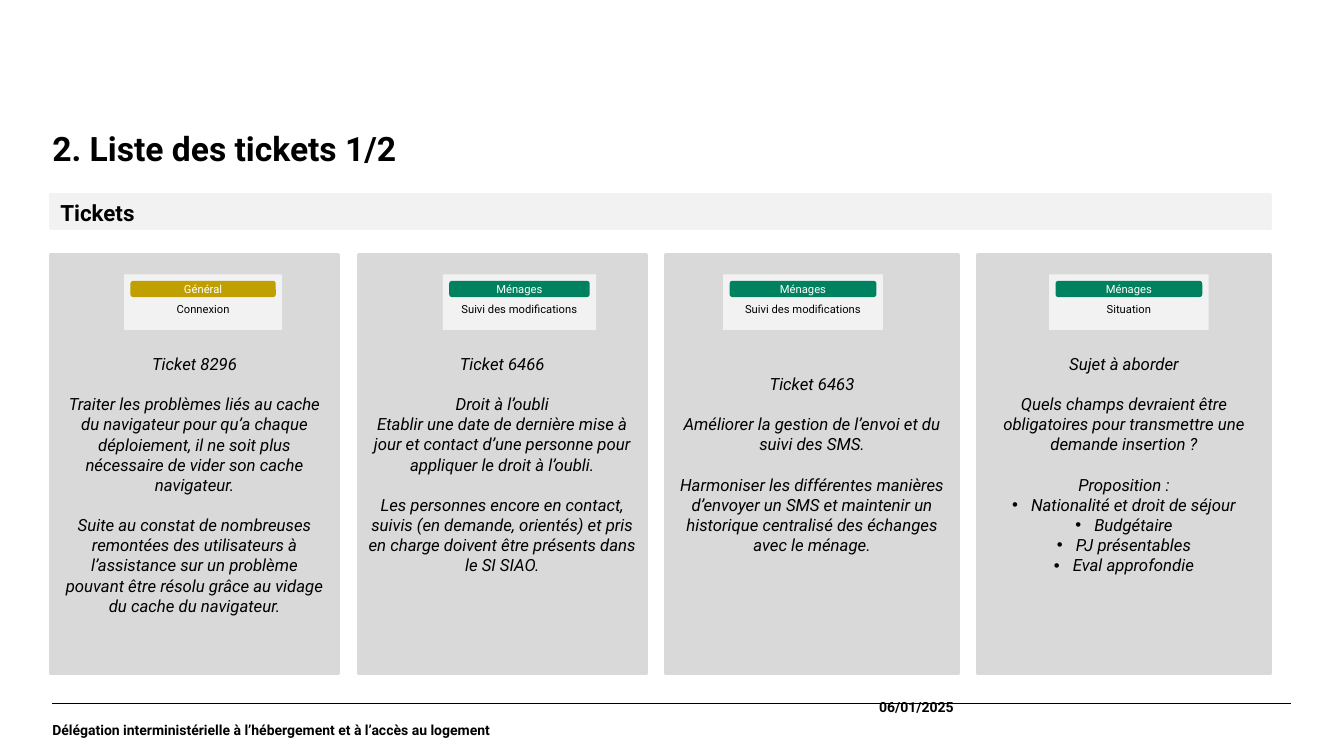
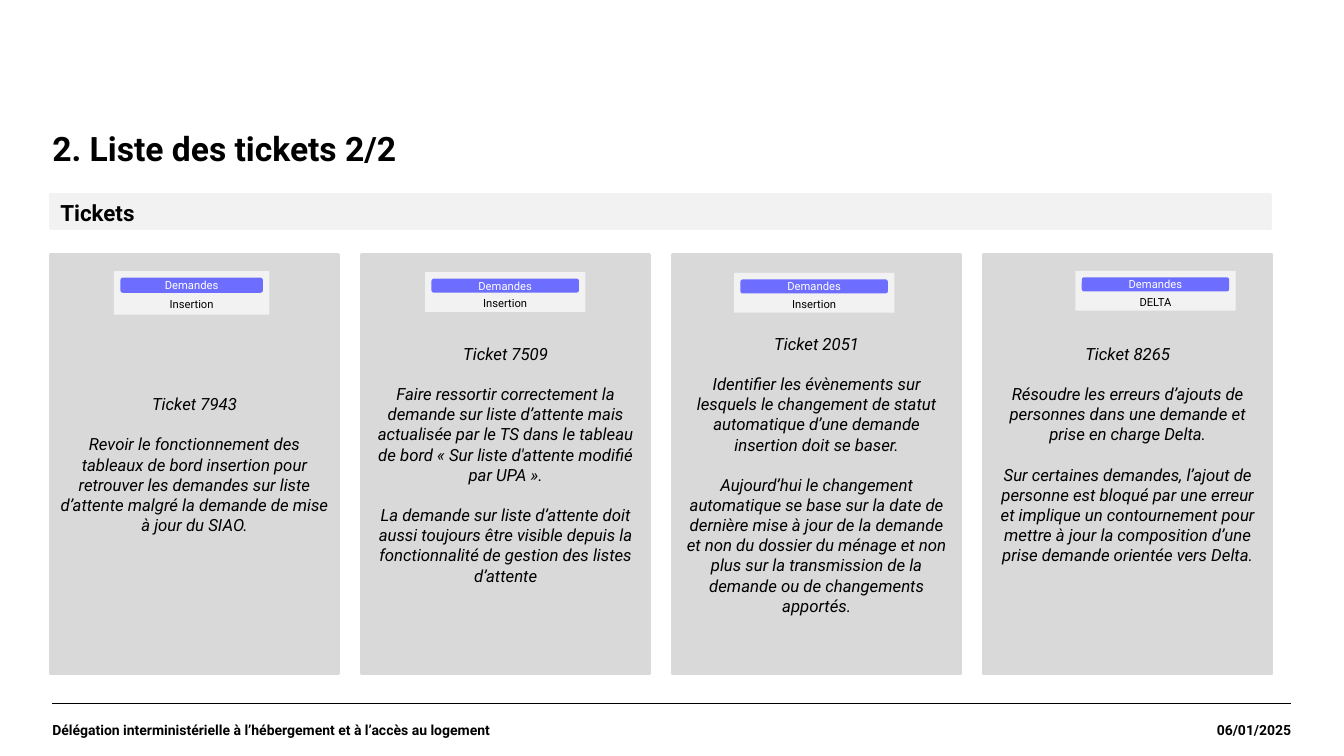
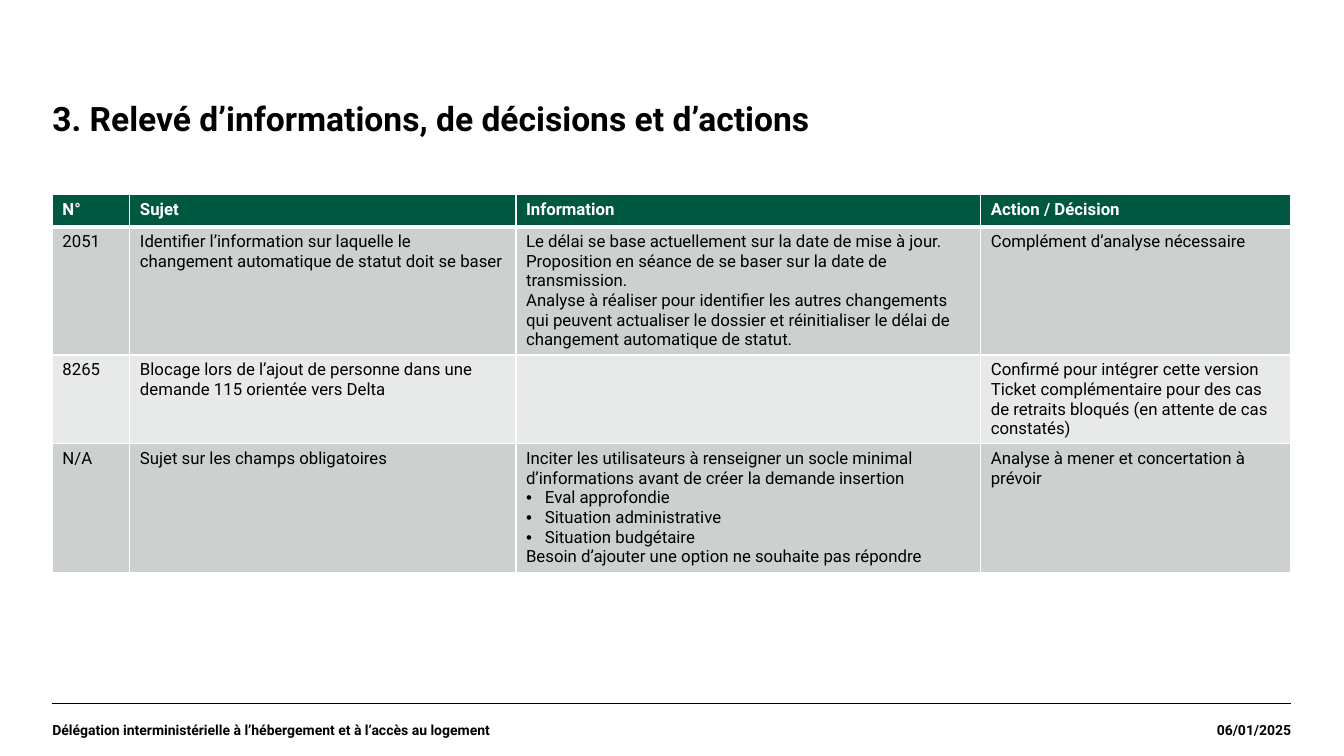
from dataclasses import dataclass

from lxml.etree import SubElement
from pptx import Presentation
from pptx.dml.color import RGBColor as RGB
from pptx.enum.shapes import MSO_CONNECTOR as CONN, MSO_SHAPE as SHAPE
from pptx.enum.text import MSO_ANCHOR as ANCHOR, MSO_AUTO_SIZE as AUTO, PP_ALIGN as ALIGN
from pptx.oxml.ns import qn
from pptx.util import Pt


@dataclass(frozen=True)
class Style:
    size: float
    color: str = "000000"
    bold: bool = False
    italic: bool = False
    align: ALIGN = ALIGN.LEFT


@dataclass(frozen=True)
class Theme:
    font: str = "Roboto"
    black: str = "000000"
    white: str = "FFFFFF"
    pale: str = "F2F2F2"
    card: str = "D9D9D9"
    gold: str = "BFA000"
    green: str = "008260"
    violet: str = "6D6DFF"
    header: str = "005841"
    rows: tuple = ("CCD1CF", "E7EAE9")
    line_gap: float = 14.4
    title: Style = Style(24, bold=True)
    band: Style = Style(16, bold=True)
    body: Style = Style(12, italic=True, align=ALIGN.CENTER)
    pill: Style = Style(8, "FFFFFF", align=ALIGN.CENTER)
    caption: Style = Style(8, align=ALIGN.CENTER)
    footer: Style = Style(10, bold=True)
    date: Style = Style(10, bold=True, align=ALIGN.RIGHT)
    head_cell: Style = Style(12, "FFFFFF", bold=True)
    cell: Style = Style(12)


T = Theme()
LEFT, MARGIN = 36, 37.4
CARD_TOP, CARD_HEIGHT = 182, 299.5


class Bullet(str):
    pass


@dataclass(frozen=True)
class Tag:
    color: str
    label: str
    caption: str
    dx: float
    y: float
    width: float
    height: float
    pill_height: float
    caption_dy: float


@dataclass(frozen=True)
class Card:
    width: float
    tag: Tag
    blocks: list
    lead: int = 0
    trail: int = 0


def box(x, y, w, h):
    return Pt(x), Pt(y), Pt(w), Pt(h)


def set_bullet(p):
    pPr = p._p.get_or_add_pPr()
    pPr.set("marL", str(Pt(13.5)))
    pPr.set("indent", str(-Pt(13.5)))
    SubElement(pPr, qn("a:buFont")).set("typeface", "Arial")
    SubElement(pPr, qn("a:buChar")).set("char", "•")


def write(tf, blocks, style):
    first = True
    for block in blocks:
        for i, text in enumerate(block):
            p = tf.paragraphs[0] if first else tf.add_paragraph()
            p.text = text
            p.alignment = style.align
            if isinstance(text, Bullet):
                set_bullet(p)
            if i == 0 and not first:
                p.space_before = Pt(T.line_gap)
            for r in p.runs:
                r.font.name = T.font
                r.font.size = Pt(style.size)
                r.font.bold = style.bold
                r.font.italic = style.italic
                r.font.color.rgb = RGB.from_string(style.color)
            first = False


def set_frame(tf, anchor, insets=(7.2, 3.6, 7.2, 3.6)):
    tf.word_wrap = True
    tf.auto_size = AUTO.NONE
    tf.vertical_anchor = anchor
    tf.margin_left, tf.margin_top, tf.margin_right, tf.margin_bottom = map(Pt, insets)


def add_box(shapes, frame, fill, border=False, kind=SHAPE.RECTANGLE):
    sp = shapes.add_shape(kind, *box(*frame))
    sp.shadow.inherit = False
    sp.fill.solid()
    sp.fill.fore_color.rgb = RGB.from_string(fill)
    if border:
        sp.line.color.rgb = RGB.from_string(fill)
        sp.line.width = Pt(2)
    else:
        sp.line.fill.background()
    return sp


def add_text(shapes, frame, text, style, anchor=ANCHOR.TOP, insets=(7.2, 3.6, 7.2, 3.6)):
    tf = shapes.add_textbox(*box(*frame)).text_frame
    set_frame(tf, anchor, insets)
    write(tf, [[text]], style)


def add_page(prs, title, title_y, date_at=(799.2, 502.6)):
    s = prs.slides.add_slide(prs.slide_layouts[5])
    sp = s.shapes.title
    sp.left, sp.top, sp.width, sp.height = box(MARGIN, title_y, 884, 75.6)
    set_frame(sp.text_frame, ANCHOR.TOP, (0, 0, 0, 0))
    write(sp.text_frame, [[title]], T.title)
    sp.text_frame.paragraphs[0].line_spacing = 0.9

    rule = s.shapes.add_connector(CONN.STRAIGHT, Pt(MARGIN), Pt(502.6), Pt(922.3), Pt(502.6))
    rule.line.color.rgb = RGB.from_string(T.black)
    rule.line.width = Pt(0.8)
    SubElement(rule._element.spPr, qn("a:effectLst"))

    flush = (0, 0, 0, 0)
    add_text(s.shapes, (*date_at, 123.1, 37.4), "06/01/2025", T.date, ANCHOR.MIDDLE, flush)
    add_text(s.shapes, (MARGIN, 502.6, 620, 37.4),
             "Délégation interministérielle à l’hébergement et à l’accès au logement",
             T.footer, ANCHOR.MIDDLE, flush)
    return s


def add_tag(s, tag, card_x):
    x, pad = card_x + tag.dx, 4.6
    shapes = s.shapes.add_group_shape().shapes
    add_box(shapes, (x, tag.y, tag.width, tag.height), T.pale)
    pill = add_box(shapes, (x + pad, tag.y + pad, tag.width - 2 * pad, tag.pill_height),
                   tag.color, kind=SHAPE.ROUNDED_RECTANGLE)
    set_frame(pill.text_frame, ANCHOR.MIDDLE, (0, 0, 0, 0))
    write(pill.text_frame, [[tag.label]], T.pill)
    add_text(shapes, (x, tag.y + tag.caption_dy, tag.width, 17), tag.caption, T.caption)


def add_ticket_page(prs, title, cards, gap, **page):
    s = add_page(prs, title, 94.3, **page)
    band = add_box(s.shapes, (LEFT, 139, 871.5, 24.5), T.pale, border=True)
    set_frame(band.text_frame, ANCHOR.TOP)
    write(band.text_frame, [["Tickets"]], T.band)
    x = LEFT
    for card in cards:
        sp = add_box(s.shapes, (x, CARD_TOP, card.width, CARD_HEIGHT), T.card, border=True)
        set_frame(sp.text_frame, ANCHOR.MIDDLE,
                  (7.2, 3.6 + card.lead * T.line_gap, 7.2, 3.6 + card.trail * T.line_gap))
        write(sp.text_frame, card.blocks, T.body)
        add_tag(s, card.tag, x)
        x += card.width + gap


def set_borders(cell, top, bottom):
    tcPr = cell._tc.get_or_add_tcPr()
    for side, width in (("L", 1), ("R", 1), ("T", top), ("B", bottom)):
        ln = SubElement(tcPr, qn(f"a:ln{side}"), w=str(Pt(width)))
        SubElement(SubElement(ln, qn("a:solidFill")), qn("a:srgbClr")).set("val", T.white)


def add_grid(s, rows, widths, heights):
    frame = box(MARGIN, 139, sum(widths), sum(heights))
    table = s.shapes.add_table(len(rows), len(widths), *frame).table
    table.horz_banding = False
    for col, width in zip(table.columns, widths):
        col.width = Pt(width)
    for i, (row, height) in enumerate(zip(rows, heights)):
        table.rows[i].height = Pt(height)
        fill = T.rows[(i - 1) % 2] if i else T.header
        for j, paragraphs in enumerate(row):
            cell = table.cell(i, j)
            set_borders(cell, 3 if i == 1 else 1, 1 if i else 3)
            cell.fill.solid()
            cell.fill.fore_color.rgb = RGB.from_string(fill)
            write(cell.text_frame, [paragraphs], T.cell if i else T.head_cell)


def general_tag(color, label, caption, dx, width):
    return Tag(color, label, caption, dx, 196, width, 39.6, 11.6, 16.6)


def request_tag(caption, dx, y, width=114.5, height=28.4, pill_height=10, caption_dy=14):
    return Tag(T.violet, "Demandes", caption, dx, y, width, height, pill_height, caption_dy)


def first_cards():
    return [
        Card(206, general_tag(T.gold, "Général", "Connexion", 52.6, 113), [
            ["Ticket 8296"],
            ["Traiter les problèmes liés au cache du navigateur pour qu’a chaque déploiement, "
             "il ne soit plus nécessaire de vider son cache navigateur."],
            ["Suite au constat de nombreuses remontées des utilisateurs à l’assistance sur un "
             "problème pouvant être résolu grâce au vidage du cache du navigateur."],
        ], lead=2),
        Card(206, general_tag(T.green, "Ménages", "Suivi des modifications", 60.5, 109.5), [
            ["Ticket 6466"],
            ["Droit à l’oubli",
             "Etablir une date de dernière mise à jour et contact d’une personne pour "
             "appliquer le droit à l’oubli."],
            ["Les personnes encore en contact, suivis (en demande, orientés) et pris en charge "
             "doivent être présents dans le SI SIAO."],
        ]),
        Card(209, general_tag(T.green, "Ménages", "Suivi des modifications", 41, 114), [
            ["Ticket 6463"],
            ["Améliorer la gestion de l’envoi et du suivi des SMS."],
            ["Harmoniser les différentes manières d’envoyer un SMS et maintenir un historique "
             "centralisé des échanges avec le ménage."],
        ]),
        Card(209, general_tag(T.green, "Ménages", "Situation", 51, 114), [
            ["Sujet à aborder"],
            ["Quels champs devraient être obligatoires pour transmettre une demande insertion ?"],
            ["Proposition :", Bullet("Nationalité et droit de séjour"), Bullet("Budgétaire"),
             Bullet("PJ présentables"), Bullet("Eval approfondie")],
        ]),
    ]


def second_cards():
    return [
        Card(206, request_tag("Insertion", 45.4, 193.7, 111, 31, 10.8, 15.1), [
            ["Ticket 7943"],
            ["Revoir le fonctionnement des tableaux de bord insertion pour retrouver les "
             "demandes sur liste d’attente malgré la demande de mise à jour du SIAO."],
        ]),
        Card(206, request_tag("Insertion", 45.4, 194.4), [
            ["Ticket 7509"],
            ["Faire ressortir correctement la demande sur liste d’attente mais actualisée par "
             "le TS dans le tableau de bord « Sur liste d'attente modifié par UPA »."],
            ["La demande sur liste d’attente doit aussi toujours être visible depuis la "
             "fonctionnalité de gestion des listes d’attente"],
        ]),
        Card(206, request_tag("Insertion", 43.9, 195), [
            ["Ticket 2051"],
            ["Identifier les évènements sur lesquels le changement de statut automatique d’une "
             "demande insertion doit se baser."],
            ["Aujourd’hui le changement automatique se base sur la date de dernière mise à jour "
             "de la demande et non du dossier du ménage et non plus sur la transmission de la "
             "demande ou de changements apportés."],
        ], lead=1),
        Card(206, request_tag("DELTA", 65.5, 193.5), [
            ["Ticket 8265"],
            ["Résoudre les erreurs d’ajouts de personnes dans une demande et prise en charge "
             "Delta."],
            ["Sur certaines demandes, l’ajout de personne est bloqué par une erreur et implique "
             "un contournement pour mettre à jour la composition d’une prise demande orientée "
             "vers Delta."],
        ], trail=1),
    ]


def decision_rows():
    return [
        [["N°"], ["Sujet"], ["Information"], ["Action / Décision"]],
        [["2051"],
         ["Identifier l’information sur laquelle le changement automatique de statut doit se "
          "baser"],
         ["Le délai se base actuellement sur la date de mise à jour.",
          "Proposition en séance de se baser sur la date de transmission.",
          "Analyse à réaliser pour identifier les autres changements qui peuvent actualiser le "
          "dossier et réinitialiser le délai de changement automatique de statut."],
         ["Complément d’analyse nécessaire"]],
        [["8265"],
         ["Blocage lors de l’ajout de personne dans une demande 115 orientée vers Delta"],
         [],
         ["Confirmé pour intégrer cette version",
          "Ticket complémentaire pour des cas de retraits bloqués (en attente de cas "
          "constatés)"]],
        [["N/A"],
         ["Sujet sur les champs obligatoires"],
         ["Inciter les utilisateurs à renseigner un socle minimal d’informations avant de créer "
          "la demande insertion",
          Bullet("Eval approfondie"), Bullet("Situation administrative"),
          Bullet("Situation budgétaire"),
          "Besoin d’ajouter une option ne souhaite pas répondre"],
         ["Analyse à mener et concertation à prévoir"]],
    ]


def main():
    prs = Presentation()
    prs.slide_width, prs.slide_height = Pt(960), Pt(540)
    add_ticket_page(prs, "2. Liste des tickets 1/2", first_cards(), 13.8, date_at=(558, 486))
    add_ticket_page(prs, "2. Liste des tickets 2/2", second_cards(), 16.2)
    s = add_page(prs, "3. Relevé d’informations, de décisions et d’actions", 73.4)
    add_grid(s, decision_rows(), (55.4, 275.8, 332, 221), (23, 91, 63, 91))
    prs.save("out.pptx")


if __name__ == "__main__":
    main()
